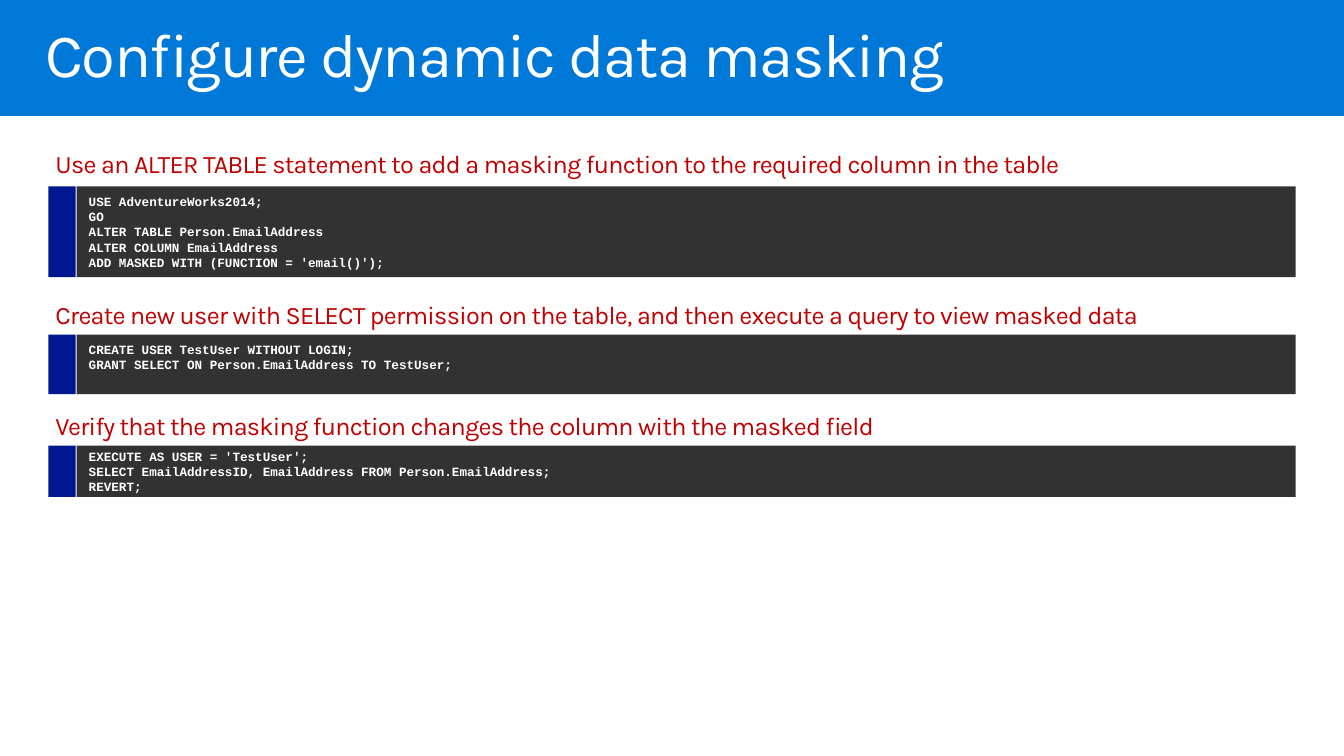
from pptx import Presentation
from pptx.dml.color import RGBColor
from pptx.enum.shapes import MSO_SHAPE
from pptx.enum.text import MSO_ANCHOR, MSO_AUTO_SIZE, PP_ALIGN
from pptx.util import Inches, Pt

RECTANGLE = MSO_SHAPE.RECTANGLE
TOP, MIDDLE = MSO_ANCHOR.TOP, MSO_ANCHOR.MIDDLE
LEFT = PP_ALIGN.LEFT
NO_FIT = MSO_AUTO_SIZE.NONE

BLUE = RGBColor(0x00, 0x78, 0xD7)
NAVY = RGBColor(0x00, 0x18, 0x8F)
CHARCOAL = RGBColor(0x32, 0x32, 0x32)
RED = RGBColor(0xC0, 0x00, 0x00)
WHITE = RGBColor(0xFF, 0xFF, 0xFF)

TITLE_ONLY = 5
BODY_FONT, CODE_FONT = "Karla", "Courier New"

# heading text, heading place (top, width, height), code place (top, height),
# space kept free below the code, code lines
STEPS = [
    ("Use an ALTER TABLE statement to add a masking function to the required column in the table",
     (1.47, 12.23, 0.54), (1.85, 0.9), 0,
     ["USE AdventureWorks2014;",
      "GO",
      "ALTER TABLE Person.EmailAddress",
      "ALTER COLUMN EmailAddress",
      "ADD MASKED WITH (FUNCTION = 'email()');"]),
    ("Create new user with SELECT permission on the table, and then execute a query to view masked data",
     (2.97, 11.5, 0.3), (3.32, 0.59), 0.15,
     ["CREATE USER TestUser WITHOUT LOGIN;",
      "GRANT SELECT ON Person.EmailAddress TO TestUser;"]),
    ("Verify that the masking function changes the column with the masked field",
     (4.07, 9.58, 0.3), (4.42, 0.51), 0,
     ["EXECUTE AS USER = 'TestUser';",
      "SELECT EmailAddressID, EmailAddress FROM Person.EmailAddress;",
      "REVERT;"]),
]


def write(frame, lines, *, font, size, color, bold=False, tracking=0, indent=0,
          line_spacing=None, anchor=TOP, insets=(0, 0, 0, 0)):
    """Fill a text frame; insets run left, top, right, bottom in inches, tracking in points."""
    frame.word_wrap = True
    frame.auto_size = NO_FIT
    frame.vertical_anchor = anchor
    (frame.margin_left, frame.margin_top,
     frame.margin_right, frame.margin_bottom) = map(Inches, insets)
    for number, line in enumerate(lines):
        para = frame.add_paragraph() if number else frame.paragraphs[0]
        para.alignment = LEFT
        if line_spacing:
            para.line_spacing = line_spacing
        if indent:
            properties = para._p.get_or_add_pPr()
            properties.set("marL", str(Inches(indent)))
            properties.set("indent", "0")
        span = para.add_run()
        span.text = line
        span.font.name = font
        span.font.size = Pt(size)
        span.font.bold = bold
        span.font.color.rgb = color
        if tracking:
            span._r.get_or_add_rPr().set("spc", str(int(tracking * 100)))


class Page:
    """A slide with the deck's title band, headings and code panels."""

    def __init__(self, deck):
        self.slide = deck.slides.add_slide(deck.slide_layouts[TITLE_ONLY])
        self.shapes = self.slide.shapes

    def block(self, left, top, width, height, color):
        box = self.shapes.add_shape(RECTANGLE, *map(Inches, (left, top, width, height)))
        box.shadow.inherit = False
        box.fill.solid()
        box.fill.fore_color.rgb = color
        box.line.fill.background()
        return box

    def title(self, text):
        band = self.block(0, 0, 13.33, 1.15, BLUE)
        title = self.shapes.title
        title._element.addprevious(band._element)
        title.left, title.top, title.width, title.height = map(Inches, (0.29, 0.14, 12.75, 0.98))
        write(title.text_frame, [text], font=BODY_FONT, size=44, color=WHITE,
              tracking=-1, line_spacing=0.9, insets=(0.16, 0.1, 0.16, 0.1))

    def heading(self, text, top, width, height):
        box = self.shapes.add_textbox(*map(Inches, (0.37, top, width, height)))
        write(box.text_frame, [text], font=BODY_FONT, size=18, color=RED,
              tracking=-0.5, indent=0.18)

    def code(self, lines, top, height, space_below):
        self.block(0.48, top, 0.27, height, NAVY)
        panel = self.block(0.76, top, 12.09, height, CHARCOAL)
        write(panel.text_frame, lines, font=CODE_FONT, size=9, color=WHITE, bold=True,
              anchor=MIDDLE, insets=(0.12, 0, 0.1, space_below))


def main():
    deck = Presentation()
    deck.slide_width, deck.slide_height = Inches(13.33), Inches(7.5)
    page = Page(deck)
    page.title("Configure dynamic data masking")
    for heading, heading_place, code_place, space_below, lines in STEPS:
        page.heading(heading, *heading_place)
        page.code(lines, *code_place, space_below)
    deck.save("out.pptx")


if __name__ == "__main__":
    main()
